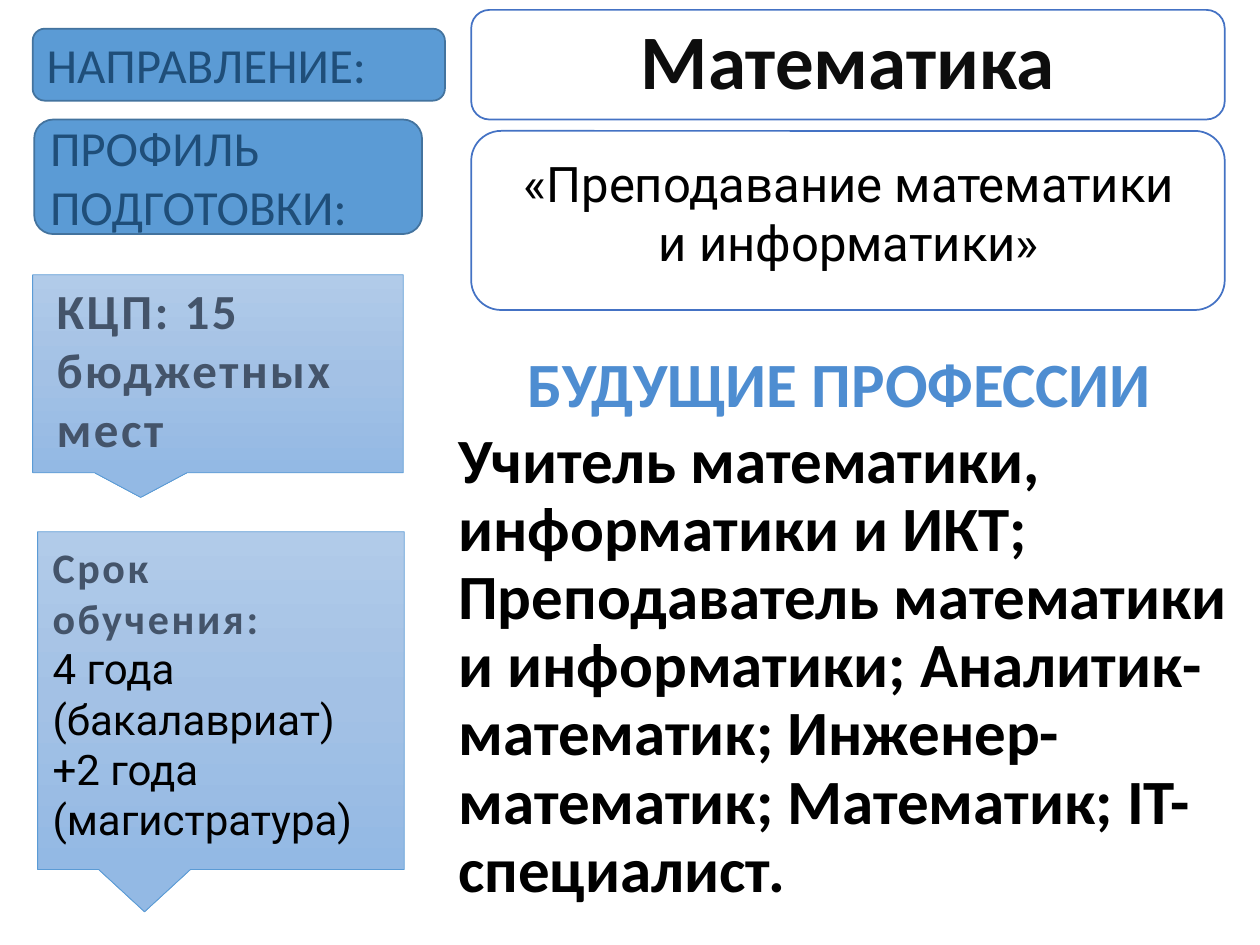
from lxml.etree import SubElement
from pptx import Presentation
from pptx.dml.color import RGBColor as RGB
from pptx.enum.shapes import MSO_SHAPE as Preset
from pptx.enum.text import MSO_ANCHOR as Anchor, PP_ALIGN as Align
from pptx.oxml.ns import qn
from pptx.util import Cm, Pt

THEME = {
    "panel": "FFFFFF", "panel_line": "4472C4",
    "label": "5B9BD5", "label_line": "43739E", "label_text": "1F4E79",
    "callout": [(0, "B1CBE9"), (50, "A3C1E5"), (100, "93B9E4")],
    "callout_line": "5B9BD5", "callout_text": "44546A",
    "heading": [(0, "74A3DB"), (49, "4E8DD1"), (50, "3C81C0"),
                (92, "3A73A7"), (100, "3971A4")],
    "title": "0D0D0D", "text": "000000",
}

# Font, size, bold, colour, letter spacing in points
STYLES = {
    "title": ("Calibri", 44, True, "title", 0),
    "heading": ("Calibri", 36, True, "heading", 0),
    "jobs": ("Calibri", 36, True, "text", 0),
    "label": ("Calibri", 28, False, "label_text", 0),
    "profile": ("Roboto", 28, False, "text", 0),
    "places": ("Calibri", 28, True, "callout_text", 1.5),
    "term": ("Calibri", 24, True, "callout_text", 1.5),
    "years": ("Roboto", 24, False, "text", 0),
}

# Preset, fill, line colour, line width
FRAMES = {
    "panel": (Preset.ROUNDED_RECTANGLE, "panel", "panel_line", 1),
    "label": (Preset.ROUNDED_RECTANGLE, "label", "label_line", 1),
    "callout": (Preset.RECTANGULAR_CALLOUT, "callout", "callout_line", 0.5),
}

# Frame kind, its place in cm (left, top, width, height)
BOXES = [
    ("panel", (9.5, 0.2, 15.19, 2.21)),
    ("panel", (9.5, 2.64, 15.19, 3.61)),
    ("label", (0.66, 0.58, 8.31, 1.45)),
    ("label", (0.69, 2.41, 7.82, 2.31)),
    ("callout", (0.66, 5.54, 7.47, 3.99)),
    ("callout", (0.76, 10.72, 7.39, 6.81)),
]

# Place in cm, paragraph format, paragraphs as (style, wording)
CENTRED = {"alignment": Align.CENTER}
TIGHT = {"line_spacing": 0.9}
TEXTS = [
    ((8.99, 8.53, 16.21, 11.3), TIGHT,
     [("jobs", "Учитель математики, информатики и ИКТ; Преподаватель математики "
               "и информатики; Аналитик-математик; Инженер-математик; Математик; "
               "IT-специалист.")]),
    ((7.21, -0.08, 19.76, 2.77), CENTRED | TIGHT, [("title", "Математика")]),
    ((0.89, 5.54, 7.19, 4.62), {}, [("places", "КЦП: 15 бюджетных мест")]),
    ((0.81, 10.8, 6.76, 7.19), {},
     [("term", "Срок обучения:"),
      ("years", "4 года (бакалавриат)"),
      ("years", "+2 года (магистратура)")]),
    ((10.39, 6.83, 13.41, 2.57), {}, [("heading", "БУДУЩИЕ ПРОФЕССИИ")]),
    ((0.69, 0.58, 7.49, 2.64), {}, [("label", "НАПРАВЛЕНИЕ:")]),
    ((0.76, 2.24, 6.83, 2.64), {}, [("label", "ПРОФИЛЬ ПОДГОТОВКИ:")]),
    ((9.96, 2.97, 14.3, 3.84), CENTRED,
     [("profile", "«Преподавание математики и информатики»")]),
]


def paint(fill, holder, colour):
    """Fill with one colour, or top to bottom with (percent, colour) stops."""
    if isinstance(colour, str):
        fill.solid()
        fill.fore_color.rgb = RGB.from_string(colour)
        return
    fill.gradient()
    fill.gradient_angle = 270
    stops = holder.find(".//" + qn("a:gsLst"))
    for stop in list(stops):
        stops.remove(stop)
    for percent, shade in colour:
        stop = SubElement(stops, qn("a:gs"), pos=str(percent * 1000))
        SubElement(stop, qn("a:srgbClr"), val=shade)


def add_frame(slide, kind, place):
    preset, fill, line, width = FRAMES[kind]
    frame = slide.shapes.add_shape(preset, *map(Cm, place))
    frame.shadow.inherit = False
    paint(frame.fill, frame.element.spPr, THEME[fill])
    frame.line.color.rgb = RGB.from_string(THEME[line])
    frame.line.width = Pt(width)


def add_text(slide, place, layout, paragraphs):
    body = slide.shapes.add_textbox(*map(Cm, place)).text_frame
    body.word_wrap = True
    if paragraphs[0][0] == "title":
        body.vertical_anchor = Anchor.MIDDLE
    for index, (style, wording) in enumerate(paragraphs):
        paragraph = body.add_paragraph() if index else body.paragraphs[0]
        for name, value in layout.items():
            setattr(paragraph, name, value)
        run = paragraph.add_run()
        run.text = wording
        face, size, bold, colour, spacing = STYLES[style]
        for name, value in {"name": face, "size": Pt(size), "bold": bold}.items():
            setattr(run.font, name, value)
        properties = run._r.get_or_add_rPr()
        paint(run.font.fill, properties, THEME[colour])
        if spacing:
            properties.set("spc", str(int(spacing * 100)))


def main():
    deck = Presentation()
    deck.slide_width, deck.slide_height = Cm(25.4), Cm(19.05)
    slide = deck.slides.add_slide(deck.slide_layouts[6])
    for box in BOXES:
        add_frame(slide, *box)
    for text in TEXTS:
        add_text(slide, *text)
    deck.save("out.pptx")


if __name__ == "__main__":
    main()
